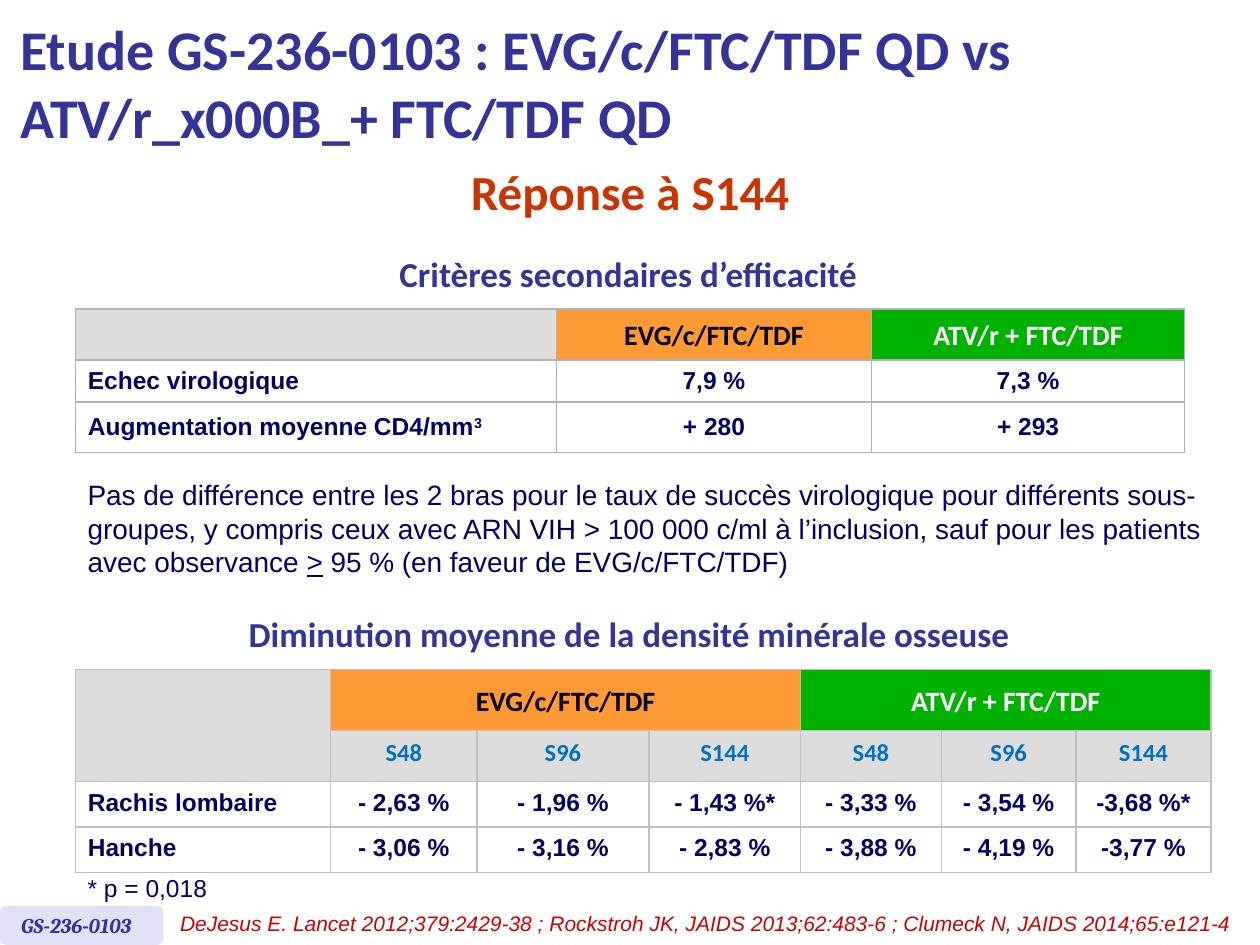
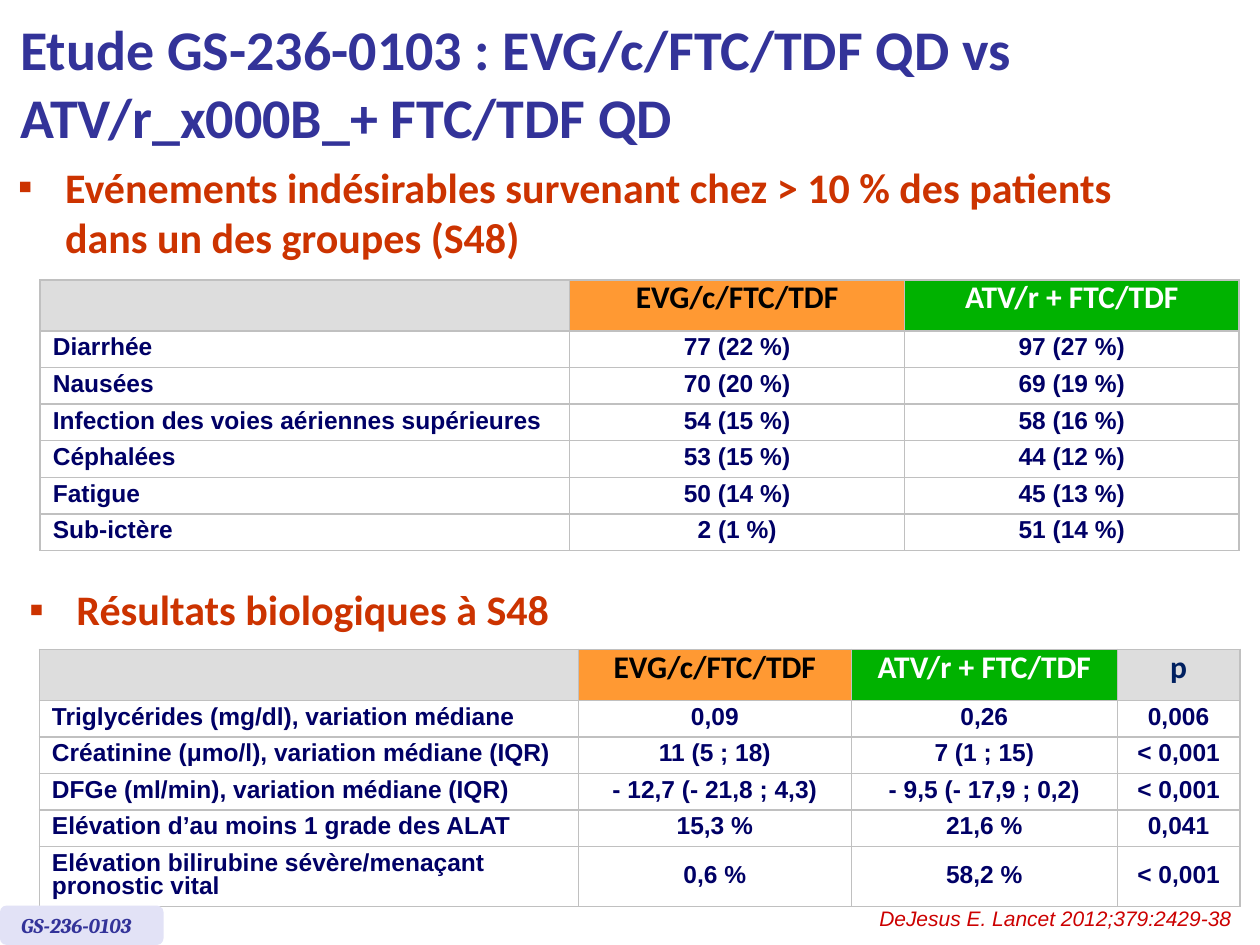
from dataclasses import dataclass, field

from lxml import etree
from pptx import Presentation
from pptx.dml.color import RGBColor
from pptx.enum.shapes import MSO_SHAPE
from pptx.enum.text import MSO_ANCHOR, MSO_AUTO_SIZE, PP_ALIGN
from pptx.oxml.ns import qn
from pptx.util import Pt

LEFT, CENTER, RIGHT = PP_ALIGN.LEFT, PP_ALIGN.CENTER, PP_ALIGN.RIGHT
MIDDLE, TOP = MSO_ANCHOR.MIDDLE, MSO_ANCHOR.TOP
NO_AUTOFIT = MSO_AUTO_SIZE.NONE
ROUNDED = MSO_SHAPE.ROUNDED_RECTANGLE


def type_style(name, size, color, bold=False, italic=False):
    return {"name": name, "size": Pt(size), "color": RGBColor.from_string(color),
            "bold": bold, "italic": italic}


@dataclass
class Theme:
    chip: str = "E2E2F6"
    accent: str = "CC3300"
    borders: tuple = ("B2B2B2", "C0C0C0")
    styles: dict = field(default_factory=lambda: {
        "title": type_style("Calibri", 32, "333399", bold=True),
        "headline": type_style("Calibri", 28, "CC3300", bold=True),
        "list": type_style("Calibri", 24, "CC3300", bold=True),
        "subhead": type_style("Calibri", 20, "333399", bold=True),
        "body": type_style("Arial", 16, "000066"),
        "note": type_style("Arial", 14, "000066"),
        "citation": type_style("Arial", 12, "CC0000", italic=True),
        "study": type_style("Cambria", 12, "333399", bold=True, italic=True),
        "evg": type_style("Calibri", 16, "000000", bold=True),
        "atv": type_style("Calibri", 16, "FFFFFF", bold=True),
        "evg large": type_style("Calibri", 18, "000000", bold=True),
        "atv large": type_style("Calibri", 18, "FFFFFF", bold=True),
        "p large": type_style("Calibri", 18, "002060", bold=True),
        "visit": type_style("Calibri", 14, "0070C0", bold=True),
        "cell": type_style("Arial", 14, "000066", bold=True),
    })
    fills: dict = field(default_factory=lambda: {
        "evg": "FF9933", "evg large": "FF9933", "atv": "00B200", "atv large": "00B200",
        "visit": "DDDDDD", "p large": "DDDDDD", "cell": "FFFFFF"})


THEME = Theme()
EVG, ATV = "EVG/c/FTC/TDF", "ATV/r + FTC/TDF"


def write(paragraph, style, text, align=LEFT):
    """Append one run in a named type style."""
    paragraph.alignment = align
    run = paragraph.add_run()
    run.text = text
    for key, value in THEME.styles[style].items():
        if key == "color":
            run.font.color.rgb = value
        else:
            setattr(run.font, key, value)
    return run


def add_results(slide, place, widths, heights, rows, heads, spacing, border):
    """Add a table; heads lists the styles of the top rows, spacing is (head, body)."""
    table = slide.shapes.add_table(len(rows), len(widths), *map(Pt, place),
                                   Pt(sum(widths)), Pt(sum(heights))).table
    table.first_row = table.horz_banding = False
    for column, width in zip(table.columns, widths):
        column.width = Pt(width)
    for r, (height, values) in enumerate(zip(heights, rows)):
        table.rows[r].height = Pt(height)
        styles = heads[r] if r < len(heads) else ["cell"] * len(widths)
        for c, (value, style) in enumerate(zip(values, styles)):
            cell = table.cell(r, c)
            cell.vertical_anchor = MIDDLE
            cell.fill.solid()
            cell.fill.fore_color.rgb = RGBColor.from_string(THEME.fills[style])
            paragraph = cell.text_frame.paragraphs[0]
            paragraph.line_spacing = spacing[0 if r == 0 else 1]
            if value:
                write(paragraph, style, value, CENTER if c else LEFT)
            props = cell._tc.get_or_add_tcPr()
            for i, side in enumerate(("lnL", "lnR", "lnT", "lnB")):
                line = etree.Element(qn(f"a:{side}"), w=str(Pt(1)))
                solid = etree.SubElement(line, qn("a:solidFill"))
                etree.SubElement(solid, qn("a:srgbClr"), val=border)
                props.insert(i, line)
    return table


deck = Presentation()
deck.slide_width, deck.slide_height = Pt(720), Pt(540)
efficacy = deck.slides.add_slide(deck.slide_layouts[5])
safety = deck.slides.add_slide(deck.slide_layouts[3])

# Efficacy: secondary endpoints
endpoints = add_results(
    efficacy, (43, 176.5), (275, 180, 179), (29, 24, 29),
    [("", EVG, ATV),
     ("Echec virologique", "7,9 %", "7,3 %"),
     ("Augmentation moyenne CD4/mm", "+ 280", "+ 293")],
    [("visit", "evg", "atv")], (Pt(21.6), None), THEME.borders[0])
cubed = write(endpoints.cell(2, 0).text_frame.paragraphs[0], "cell", "3")
cubed._r.get_or_add_rPr().set("baseline", "30000")

# Efficacy: bone mineral density
bone_density = add_results(
    efficacy, (43, 382.5), (146, 83.5, 98.5, 86.5, 80.5, 77, 77), (35, 27.5, 26, 26),
    [("", EVG, "", "", ATV, "", ""),
     ("", *("S48", "S96", "S144") * 2),
     ("Rachis lombaire", "- 2,63 %", "- 1,96 %", "- 1,43 %*",
      "- 3,33 %", "- 3,54 %", "-3,68 %*"),
     ("Hanche", "- 3,06 %", "- 3,16 %", "- 2,83 %", "- 3,88 %", "- 4,19 %", "-3,77 %")],
    [("visit", *["evg"] * 3, *["atv"] * 3), ["visit"] * 7],
    (Pt(21.6), Pt(13.5)), THEME.borders[1])
for start, end in (((0, 0), (1, 0)), ((0, 1), (0, 3)), ((0, 4), (0, 6))):
    bone_density.cell(*start).merge(bone_density.cell(*end))

# Safety: adverse events
add_results(
    safety, (23, 160), (302.5, 191.5, 191), (25, *[20.9] * 6),
    [("", EVG, ATV),
     ("Diarrhée", "77 (22 %)", "97 (27 %)"),
     ("Nausées", "70 (20 %)", "69 (19 %)"),
     ("Infection des voies aériennes supérieures", "54 (15 %)", "58 (16 %)"),
     ("Céphalées", "53 (15 %)", "44 (12 %)"),
     ("Fatigue", "50 (14 %)", "45 (13 %)"),
     ("Sub-ictère", "2 (1 %)", "51 (14 %)")],
    [("visit", "evg large", "atv large")], (Pt(13.5), Pt(13.5)), THEME.borders[1])

# Safety: laboratory results
add_results(
    safety, (22.5, 371), (308, 156, 152, 70), (29, *[20.9] * 4, 34.2),
    [("", EVG, ATV, "p"),
     ("Triglycérides (mg/dl), variation médiane", "0,09", "0,26", "0,006"),
     ("Créatinine (μmo/l), variation médiane (IQR)", "11 (5 ; 18)", "7 (1 ; 15)", "< 0,001"),
     ("DFGe (ml/min), variation médiane (IQR)",
      "- 12,7 (- 21,8 ; 4,3)", "- 9,5 (- 17,9 ; 0,2)", "< 0,001"),
     ("Elévation d’au moins 1 grade des ALAT", "15,3 %", "21,6 %", "0,041"),
     ("Elévation bilirubine sévère/menaçant pronostic vital", "0,6 %", "58,2 %", "< 0,001")],
    [("visit", "evg large", "atv large", "p large")], (Pt(13.5), Pt(13.5)), THEME.borders[1])

# Headings, commentary and citations
texts = [
    (efficacy, (260.5, 88.5, 199, 41), "headline", CENTER, False, TOP, ["Réponse à S144"]),
    (efficacy, (220, 141, 278, 31.5), "subhead", CENTER, False, TOP,
     ["Critères secondaires d’efficacité"]),
    (efficacy, (43, 269, 684, 65.5), "body", LEFT, True, MIDDLE,
     ["Pas de différence entre les 2 bras pour le taux de succès virologique pour différents "
      "sous-groupes, y compris ceux avec ARN VIH > 100 000 c/ml à l’inclusion, sauf pour les "
      "patients avec observance ", ">", " 95 % (en faveur de EVG/c/FTC/TDF)"]),
    (efficacy, (133, 346.5, 453, 31.5), "subhead", CENTER, False, TOP,
     ["Diminution moyenne de la densité minérale osseuse"]),
    (efficacy, (43, 495.5, 87, 24.5), "note", LEFT, False, TOP, ["* p = 0,018"]),
    (efficacy, (91, 517, 620, 21.5), "citation", RIGHT, True, TOP,
     ["DeJesus E. Lancet 2012;379:2429-38 ; Rockstroh JK, JAIDS 2013;62:483-6 ; "
      "Clumeck N, JAIDS 2014;65:e121-4"]),
    (safety, (495, 514, 216, 21.5), "citation", RIGHT, True, TOP,
     ["DeJesus E. Lancet 2012;379:2429-38"]),
]
for slide, place, style, align, wrap, anchor, pieces in texts:
    frame = slide.shapes.add_textbox(*map(Pt, place)).text_frame
    frame.word_wrap, frame.vertical_anchor = wrap, anchor
    for piece in pieces:
        run = write(frame.paragraphs[0], style, piece, align)
        if piece == ">":
            run.font.underline = True

# Bulleted section headings
sections = [
    (1, (3, 88.5, 646, 71),
     "Evénements indésirables survenant chez > 10 % des patients dans un des groupes (S48)"),
    (2, (9.5, 330, 710.5, 36.5), "Résultats biologiques à S48"),
]
for index, place, heading in sections:
    section = safety.placeholders[index]
    section.left, section.top, section.width, section.height = map(Pt, place)
    section.text_frame.auto_size = NO_AUTOFIT
    paragraph = section.text_frame.paragraphs[0]
    props = paragraph._p.get_or_add_pPr()
    props.set("marL", str(Pt(27)))
    props.set("indent", str(-Pt(27)))
    bullet_color = etree.SubElement(props, qn("a:buClr"))
    etree.SubElement(bullet_color, qn("a:srgbClr"), val=THEME.accent)
    etree.SubElement(props, qn("a:buFont"), typeface="Arial")
    etree.SubElement(props, qn("a:buChar"), char="▪")
    paragraph.space_before = Pt(0)
    write(paragraph, "list", heading)

# Shared title and study tag
for slide in deck.slides:
    title = slide.shapes.title
    title.left, title.top, title.width, title.height = map(Pt, (4.5, 3.5, 687.5, 87))
    title.text_frame.auto_size = NO_AUTOFIT
    title.text_frame.vertical_anchor = MIDDLE
    write(title.text_frame.paragraphs[0], "title",
          "Etude GS-236-0103 : EVG/c/FTC/TDF QD vs ATV/r\v+ FTC/TDF QD")

    study_tag = slide.shapes.add_shape(ROUNDED, *map(Pt, (0, 517.5, 93.5, 22.5)))
    study_tag.adjustments[0] = 0.17
    study_tag.shadow.inherit = False
    study_tag.fill.solid()
    study_tag.fill.fore_color.rgb = RGBColor.from_string(THEME.chip)
    study_tag.line.fill.background()
    study_tag.text_frame.margin_left = Pt(11)
    study_tag.text_frame.vertical_anchor = MIDDLE
    write(study_tag.text_frame.paragraphs[0], "study", "GS-236-0103")

deck.save("out.pptx")
